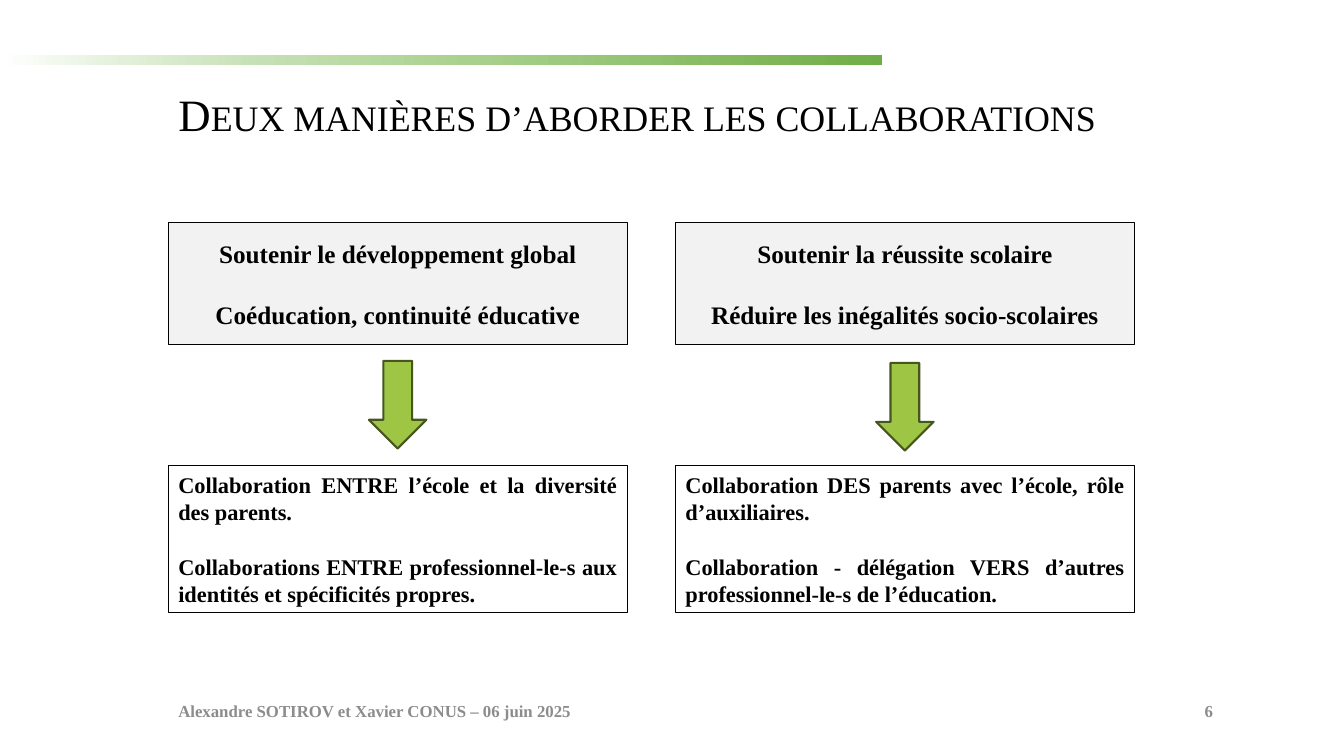
from lxml import etree
from pptx import Presentation
from pptx.dml.color import RGBColor
from pptx.enum.shapes import MSO_SHAPE as Shape
from pptx.enum.text import MSO_ANCHOR as Anchor, MSO_AUTO_SIZE as AutoSize, PP_ALIGN as Align
from pptx.oxml.ns import qn
from pptx.util import Inches, Pt

TITLE = "Deux manières d’aborder les collaborations"
APPROACHES = [
    {"left": 1.67, "arrow_top": 3.58,
     "aims": ["Soutenir le développement global",
              "Coéducation, continuité éducative"],
     "collaborations": [
         "Collaboration ENTRE l’école et la diversité des parents.",
         "Collaborations ENTRE professionnel-le-s aux identités et spécificités propres."]},
    {"left": 6.7, "arrow_top": 3.6,
     "aims": ["Soutenir la réussite scolaire",
              "Réduire les inégalités socio-scolaires"],
     "collaborations": [
         "Collaboration DES parents avec l’école, rôle d’auxiliaires.",
         "Collaboration - délégation VERS d’autres professionnel-le-s de l’éducation."]},
]
FOOTERS = [
    ("Alexandre SOTIROV et Xavier CONUS – 06 juin 2025", 1.67, 5, Align.LEFT),
    ("6", 9.13, 3, Align.RIGHT),
]
BAND_STOPS = [(0, "FFFFFF"), (14, "E2F0D9"), (30, "C5E0B4"), (53, "A9D18E"), (100, "70AD47")]

FONT = "Times New Roman"
BLACK = RGBColor(0x00, 0x00, 0x00)
GREY = RGBColor(0x8C, 0x8C, 0x8C)
PALE = RGBColor(0xF2, 0xF2, 0xF2)
GREEN = RGBColor(0x9E, 0xC5, 0x44)
DARK_GREEN = RGBColor(0x45, 0x56, 0x1E)

BOX_WIDTH = 4.55
ARROW_WIDTH, ARROW_HEIGHT = 0.57, 0.87


def write(frame, lines, size, color=BLACK, bold=True, align=Align.LEFT, gap=0):
    """Write one paragraph per line, with gap points between paragraphs."""
    frame.word_wrap = True
    frame.auto_size = AutoSize.NONE
    frame.vertical_anchor = Anchor.MIDDLE
    for i, line in enumerate(lines):
        paragraph = frame.add_paragraph() if i else frame.paragraphs[0]
        paragraph.alignment = align
        paragraph.space_before = Pt(gap if i else 0)
        run = paragraph.add_run()
        run.text = line
        run.font.name = FONT
        run.font.size = Pt(size)
        run.font.bold = bold
        run.font.color.rgb = color


def add_figure(slide, kind, left, top, width, height, fill=None, line=None, weight=0.75):
    figure = slide.shapes.add_shape(
        kind, Inches(left), Inches(top), Inches(width), Inches(height))
    figure.shadow.inherit = False
    if fill is None:
        figure.fill.background()
    else:
        figure.fill.solid()
        figure.fill.fore_color.rgb = fill
    if line is None:
        figure.line.fill.background()
    else:
        figure.line.color.rgb = line
        figure.line.width = Pt(weight)
    return figure


def add_band(slide):
    band = add_figure(slide, Shape.RECTANGLE, 0, 0.55, 8.75, 0.1)
    band.fill.gradient()
    band.fill.gradient_angle = 0
    stops = next(band._element.iter(qn("a:gsLst")))
    for stop in list(stops):
        stops.remove(stop)
    for position, color in BAND_STOPS:
        stop = etree.SubElement(stops, qn("a:gs"), pos=str(position * 1000))
        etree.SubElement(stop, qn("a:srgbClr"), val=color)


def add_title(slide):
    title = slide.shapes.title
    title.left, title.top = Inches(1.67), Inches(0.67)
    title.width, title.height = Inches(10.46), Inches(0.98)
    write(title.text_frame, [TITLE], 32, bold=False)
    paragraph = title.text_frame.paragraphs[0]
    paragraph.line_spacing = 0.9
    paragraph.runs[0].font._element.set("cap", "small")


def add_approach(slide, approach):
    left = approach["left"]
    aims = add_figure(slide, Shape.RECTANGLE, left, 2.21, BOX_WIDTH, 1.21, PALE, BLACK)
    write(aims.text_frame, approach["aims"], 18, align=Align.CENTER, gap=22)
    collaborations = add_figure(
        slide, Shape.RECTANGLE, left, 4.62, BOX_WIDTH, 1.46, line=BLACK)
    write(collaborations.text_frame, approach["collaborations"], 16,
          align=Align.JUSTIFY, gap=20)
    add_figure(slide, Shape.DOWN_ARROW, left + (BOX_WIDTH - ARROW_WIDTH) / 2,
               approach["arrow_top"], ARROW_WIDTH, ARROW_HEIGHT, GREEN, DARK_GREEN, 1.5)


def main():
    deck = Presentation()
    deck.slide_width, deck.slide_height = Inches(13.33), Inches(7.5)
    slide = deck.slides.add_slide(deck.slide_layouts[5])
    add_title(slide)
    add_band(slide)
    for approach in APPROACHES:
        add_approach(slide, approach)
    for text, left, width, align in FOOTERS:
        footer = slide.shapes.add_textbox(
            Inches(left), Inches(6.85), Inches(width), Inches(0.4))
        write(footer.text_frame, [text], 12, GREY, align=align)
    deck.save("out.pptx")


if __name__ == "__main__":
    main()
